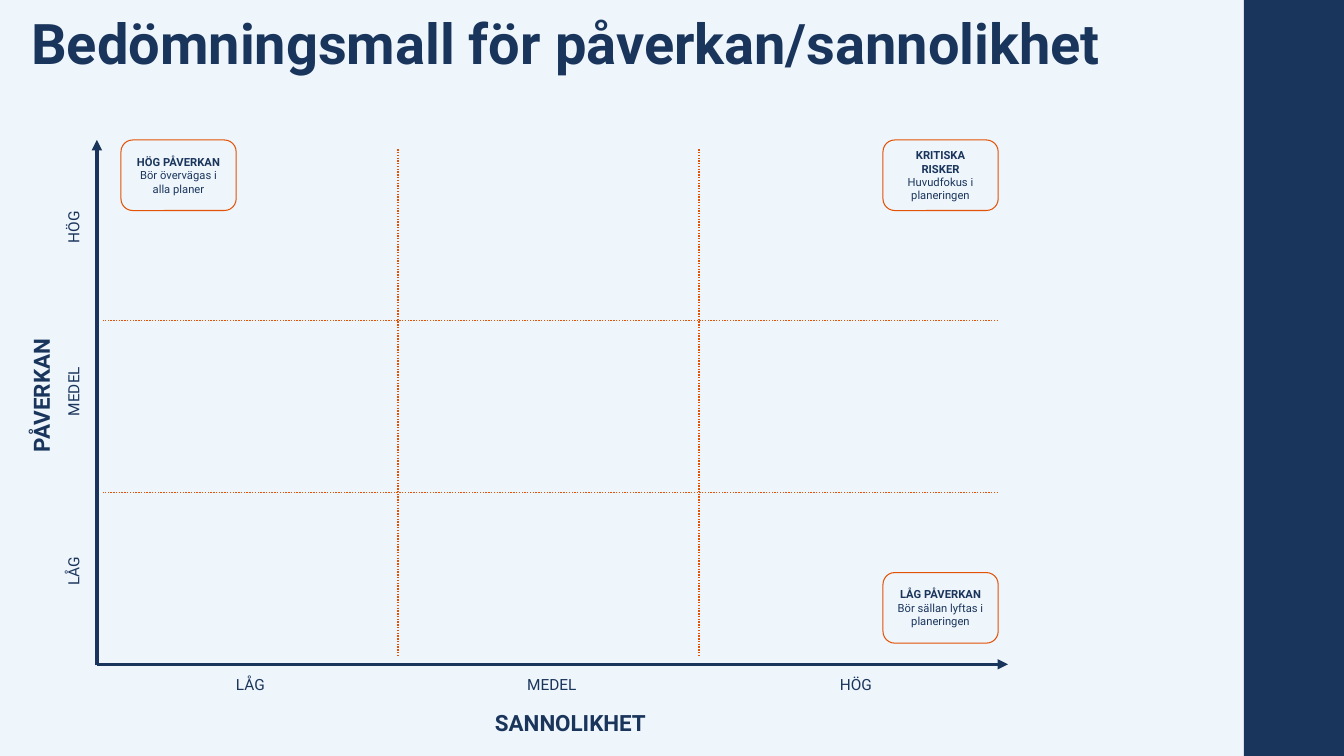
from pptx import Presentation
from pptx.dml.color import RGBColor
from pptx.enum.dml import MSO_LINE
from pptx.enum.shapes import MSO_CONNECTOR, MSO_SHAPE
from pptx.enum.text import MSO_ANCHOR, PP_ALIGN
from pptx.oxml.ns import qn
from pptx.util import Pt
from lxml.etree import SubElement

COLORS = {"background": "EEF5FB", "navy": "1A355C", "orange": "E35205"}
FONT = "Roboto"


class MatrixSlide:
    def __init__(self, slide):
        self.slide = slide
        slide.background.fill.solid()
        slide.background.fill.fore_color.rgb = self.color("background")

    def color(self, name):
        return RGBColor.from_string(COLORS[name])

    def style(self, paragraph, size, bold=False, align=PP_ALIGN.CENTER):
        paragraph.alignment = align
        font = paragraph.font
        font.name, font.size, font.bold = FONT, Pt(size), bold
        font.color.rgb = self.color("navy")

    def title(self, text, left, top, width, height):
        heading = self.slide.shapes.title
        heading.left, heading.top = Pt(left), Pt(top)
        heading.width, heading.height = Pt(width), Pt(height)
        frame = heading.text_frame
        frame.text = text
        frame.vertical_anchor = MSO_ANCHOR.TOP
        frame.margin_left = frame.margin_right = 0
        frame.margin_top = frame.margin_bottom = 0
        frame.paragraphs[0].line_spacing = 0.9
        self.style(frame.paragraphs[0], 40, True, PP_ALIGN.LEFT)

    def band(self, left, top, width, height):
        side = self.slide.shapes.add_shape(
            MSO_SHAPE.RECTANGLE, Pt(left), Pt(top), Pt(width), Pt(height))
        side.shadow.inherit = False
        side.fill.solid()
        side.fill.fore_color.rgb = self.color("navy")
        side.line.fill.background()

    def line(self, start, end, color, width):
        stroke = self.slide.shapes.add_connector(
            MSO_CONNECTOR.STRAIGHT, *map(Pt, start), *map(Pt, end))
        stroke.line.color.rgb = self.color(color)
        stroke.line.width = Pt(width)
        return stroke

    def finish(self, stroke):
        SubElement(stroke._element.spPr, qn("a:effectLst"))

    def axis(self, start, end):
        stroke = self.line(start, end, "navy", 2.5)
        SubElement(stroke.line._get_or_add_ln(), qn("a:tailEnd"), type="triangle")
        self.finish(stroke)

    def divider(self, start, end):
        stroke = self.line(start, end, "orange", 1)
        stroke.line.dash_style = MSO_LINE.ROUND_DOT
        self.finish(stroke)

    def label(self, text, center, width, size=11, bold=False, rotation=0):
        height = size * 1.2 + 7.2
        caption = self.slide.shapes.add_textbox(
            Pt(center[0] - width / 2), Pt(center[1] - height / 2), Pt(width), Pt(height))
        caption.rotation = rotation
        frame = caption.text_frame
        frame.word_wrap = False
        frame.vertical_anchor = MSO_ANCHOR.MIDDLE
        frame.text = text
        self.style(frame.paragraphs[0], size, bold)

    def callout(self, heading, advice, left, top):
        card = self.slide.shapes.add_shape(
            MSO_SHAPE.ROUNDED_RECTANGLE, Pt(left), Pt(top), Pt(82.3), Pt(50.4))
        card.shadow.inherit = False
        card.fill.background()
        card.line.color.rgb = self.color("orange")
        card.line.width = Pt(0.75)
        frame = card.text_frame
        frame.word_wrap = True
        frame.vertical_anchor = MSO_ANCHOR.MIDDLE
        frame.text = f"{heading}\n{advice}"
        for paragraph, bold in zip(frame.paragraphs, (True, False)):
            self.style(paragraph, 8, bold)


def main():
    deck = Presentation()
    deck.slide_width, deck.slide_height = Pt(960), Pt(540)
    matrix = MatrixSlide(deck.slides.add_slide(deck.slide_layouts[5]))
    matrix.band(888.5, 0, 71.5, 540)
    matrix.title("Bedömningsmall för påverkan/sannolikhet", 22.3, 11.5, 809.3, 84)

    origin_x, origin_y = 69.2, 474.5
    column, row = 215, 122.7
    matrix.axis((origin_x, origin_y + 0.7), (origin_x, 100))
    matrix.axis((origin_x, origin_y), (720, origin_y))
    for step in (1, 2):
        x, y = origin_x + step * column, origin_y - step * row
        matrix.divider((x, 106.6), (x, 469.4))
        matrix.divider((712.8, y), (73.4, y))

    levels = [("LÅG", 35, 178.9, 407.9), ("MEDEL", 50, 394.2, 279.7), ("HÖG", 38, 611.4, 162.4)]
    for level, width, likelihood_x, impact_y in levels:
        matrix.label(level, (likelihood_x, 488.5), width)
        matrix.label(level, (52.3, impact_y), width, rotation=270)
    matrix.label("SANNOLIKHET", (407.5, 515.9), 128, 16, True)
    matrix.label("PÅVERKAN", (29.2, 282.5), 101, 16, True, 270)

    matrix.callout("HÖG PÅVERKAN", "Bör övervägas i alla planer", 86.4, 100)
    matrix.callout("KRITISKA RISKER", "Huvudfokus i planeringen", 630.7, 100)
    matrix.callout("LÅG PÅVERKAN", "Bör sällan lyftas i planeringen", 630.7, 409)
    deck.save("out.pptx")


if __name__ == "__main__":
    main()
